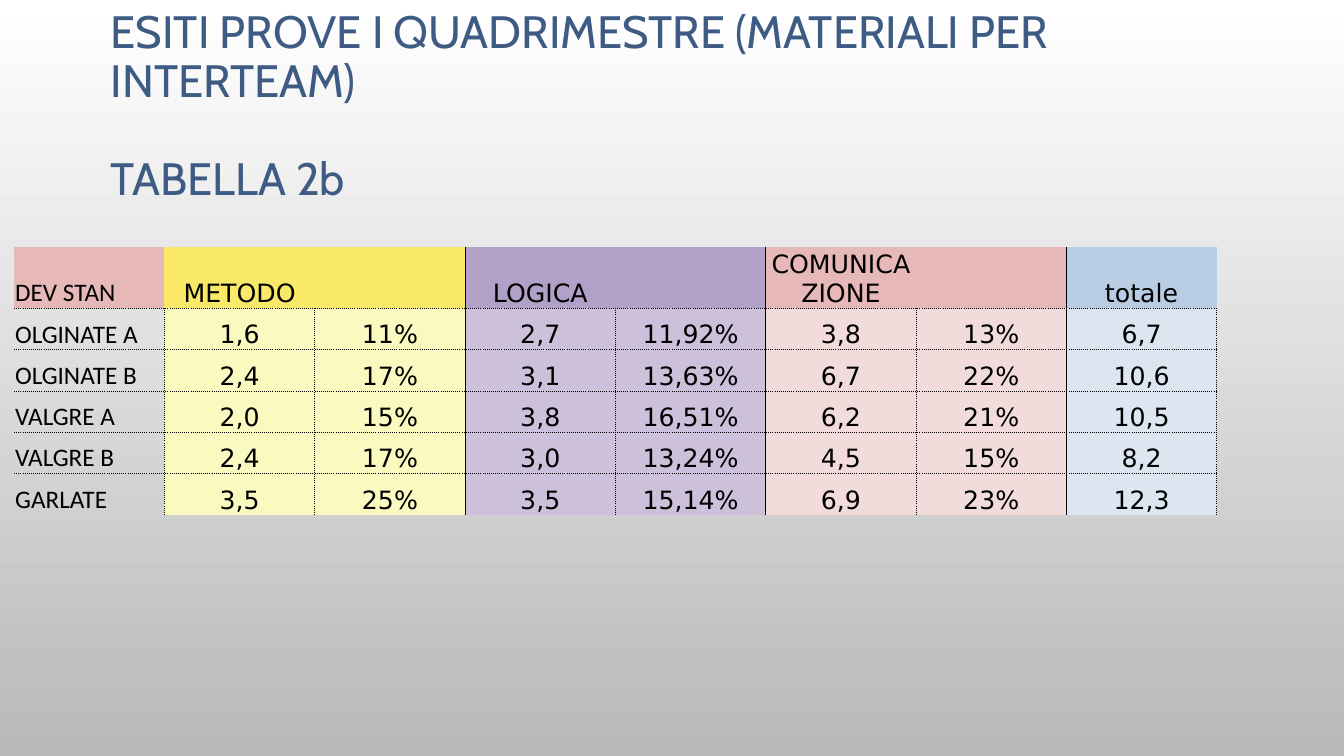
from lxml.etree import SubElement
from pptx import Presentation
from pptx.dml.color import RGBColor
from pptx.enum.text import MSO_ANCHOR, PP_ALIGN
from pptx.oxml.ns import qn
from pptx.util import Inches, Pt

COLORS = {
    "title": "3E5C83", "ink": "000000", "top": "FFFFFF", "bottom": "B9B9B9",
    "rose": "E6B8B7", "yellow": "FAE868", "purple": "B1A0C7", "blue": "B8CCE4",
    "pale_rose": "F2DCDB", "pale_yellow": "FAF9BF", "pale_purple": "CCC0DA",
    "pale_blue": "DCE6F1",
}
HEADER_FILLS = ["rose", "yellow", "yellow", "purple", "purple", "rose", "rose", "blue"]
BODY_FILLS = [None, "pale_yellow", "pale_yellow", "pale_purple", "pale_purple",
              "pale_rose", "pale_rose", "pale_blue"]
RESULTS = [
    ["DEV STAN", "METODO", "", "LOGICA", "", "COMUNICAZIONE", "", "totale"],
    ["OLGINATE A", "1,6", "11%", "2,7", "11,92%", "3,8", "13%", "6,7"],
    ["OLGINATE B", "2,4", "17%", "3,1", "13,63%", "6,7", "22%", "10,6"],
    ["VALGRE A", "2,0", "15%", "3,8", "16,51%", "6,2", "21%", "10,5"],
    ["VALGRE B", "2,4", "17%", "3,0", "13,24%", "4,5", "15%", "8,2"],
    ["GARLATE", "3,5", "25%", "3,5", "15,14%", "6,9", "23%", "12,3"],
]
GROUP_ENDS = (2, 4, 6)


class SlideBuilder:
    """Holds the style and the current slide."""

    def __init__(self, page):
        self.page = page

    def color(self, name):
        return RGBColor.from_string(COLORS[name])

    def background(self):
        fill = self.page.background.fill
        fill.gradient()
        fill.gradient_angle = 270
        for stop, name in zip(fill.gradient_stops, ("top", "bottom")):
            stop.color.rgb = self.color(name)

    def span(self, para, text, font, size, color):
        span = para.add_run()
        span.text = text
        span.font.name = font
        span.font.size = Pt(size)
        span.font.color.rgb = self.color(color)

    def title(self, lines, left, top, width, height):
        box = self.page.shapes.add_textbox(Inches(left), Inches(top), Inches(width), Inches(height))
        frame = box.text_frame
        frame.word_wrap = True
        frame.vertical_anchor = MSO_ANCHOR.BOTTOM
        frame.margin_bottom = Inches(0.39)
        for index, line in enumerate(lines):
            para = frame.add_paragraph() if index else frame.paragraphs[0]
            para.line_spacing = 0.9
            if index:
                para.space_before = Pt(35)
            self.span(para, line, "Cabin", 32.4, "title")

    def border(self, cell, side, dash):
        line = SubElement(cell._tc.get_or_add_tcPr(), qn(f"a:ln{side}"), w=str(Pt(0.5)))
        if dash is None:
            SubElement(line, qn("a:noFill"))
            return
        solid = SubElement(line, qn("a:solidFill"))
        SubElement(solid, qn("a:srgbClr"), val=COLORS["ink"])
        SubElement(line, qn("a:prstDash"), val=dash)

    def upright(self, row, edge):
        if edge in GROUP_ENDS:
            return "solid"
        return "sysDot" if row and edge >= 0 else None

    def cell(self, cell, row, column, text, last_row):
        cell.margin_left = cell.margin_top = cell.margin_right = Inches(0.01)
        cell.margin_bottom = 0
        cell.vertical_anchor = MSO_ANCHOR.BOTTOM
        self.border(cell, "L", self.upright(row, column - 1))
        self.border(cell, "R", self.upright(row, column))
        self.border(cell, "T", "sysDot" if row else None)
        self.border(cell, "B", "sysDot" if row < last_row else None)
        fill = (BODY_FILLS if row else HEADER_FILLS)[column]
        if fill:
            cell.fill.solid()
            cell.fill.fore_color.rgb = self.color(fill)
        else:
            cell.fill.background()
        if text:
            para = cell.text_frame.paragraphs[0]
            para.alignment = PP_ALIGN.CENTER if column else PP_ALIGN.LEFT
            self.span(para, text, "DejaVu Sans" if column else "Calibri", 18, "ink")

    def table(self, values, left, top, width, header_height, row_height):
        rows, columns = len(values), len(values[0])
        height = header_height + row_height * (rows - 1)
        table = self.page.shapes.add_table(
            rows, columns, Inches(left), Inches(top), Inches(width), Inches(height)).table
        table.first_row = table.horz_banding = False
        for row, texts in enumerate(values):
            table.rows[row].height = Inches(row_height if row else header_height)
            for column, text in enumerate(texts):
                self.cell(table.cell(row, column), row, column, text, rows - 1)


def main():
    deck = Presentation()
    deck.slide_width, deck.slide_height = Inches(13.33), Inches(7.5)
    builder = SlideBuilder(deck.slides.add_slide(deck.slide_layouts[6]))
    builder.background()
    builder.title(["ESITI PROVE I QUADRIMESTRE (MATERIALI PER INTERTEAM)", "TABELLA 2b"],
                  1, 0.68, 11.33, 1.75)
    builder.table(RESULTS, 0.14, 2.45, 11.93, 0.6, 0.41)
    deck.save("out.pptx")


if __name__ == "__main__":
    main()
